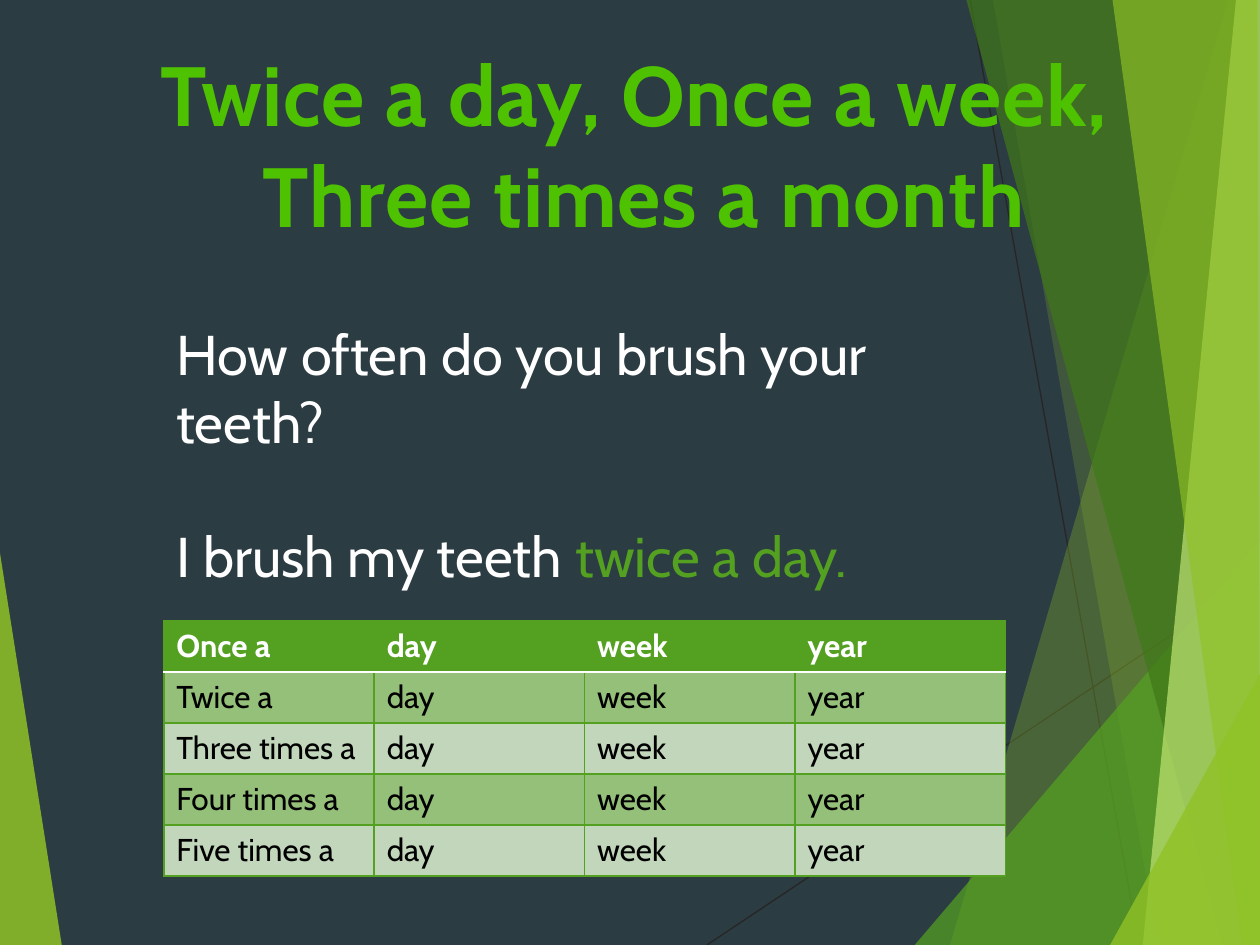
from lxml import etree
from pptx import Presentation
from pptx import util as u
from pptx.dml.color import RGBColor
from pptx.enum import shapes, text
from pptx.oxml import ns

WIDTH, HEIGHT = 10, 7.5
FONT = "Cabin"
COLOURS = {
    "back": "2C3C43", "line": "262626", "lime": "90C226", "green": "54A021",
    "forest": "3F7819", "pale": "C0E474", "title": "4EC100", "white": "FFFFFF",
    "black": "000000", "band dark": "95C07A", "band light": "C1D6BA",
}
RAYS = [((5.61, HEIGHT), (WIDTH, 4.57)), ((7.7, 0), (9.04, HEIGHT))]
FACETS = [
    ("lime", 85, [(0, 4.39), (0.49, HEIGHT), (0, HEIGHT)]),
    ("lime", 30, [(9.75, 0), (7.54, HEIGHT), (WIDTH, HEIGHT), (WIDTH, 0)]),
    ("lime", 20, [(7.88, 0), (9.19, HEIGHT), (WIDTH, HEIGHT), (WIDTH, 0)]),
    ("green", 72, [(7.26, HEIGHT), (WIDTH, 4.29), (WIDTH, HEIGHT)]),
    ("forest", 70, [(7.67, 0), (9.7, HEIGHT), (WIDTH, HEIGHT), (WIDTH, 0)]),
    ("pale", 70, [(9.81, 0), (9.07, HEIGHT), (WIDTH, HEIGHT), (WIDTH, 0)]),
    ("lime", 65, [(8.83, 0), (9.86, HEIGHT), (WIDTH, HEIGHT), (9.98, 0)]),
    ("lime", 80, [(8.81, HEIGHT), (WIDTH, 5.35), (WIDTH, HEIGHT)]),
]
TITLE = [[("Twice a day, Once a week, ", "title")], [("Three times a month", "title")]]
DIALOGUE = [
    [("How often do you brush your teeth?", "white")],
    [("I brush my teeth ", "white"), ("twice a day.", "green")],
]
COUNTS = ["Once a", "Twice a", "Three times a", "Four times a", "Five times a"]
PERIODS = ["day", "week", "year"]
TITLE_FORMAT = {"name": FONT, "size": u.Pt(48), "bold": True}
BODY_FORMAT = {"name": FONT, "size": u.Pt(32), "bold": False}
TABLE_LEFT, TABLE_TOP, COLUMN, ROW = 1.3, 4.93, 1.67, 0.405


def rgb(name):
    return RGBColor.from_string(COLOURS[name])


def add_span(para, wording, colour, values):
    span = para.add_run()
    span.text = wording
    for key, value in values.items():
        setattr(span.font, key, value)
    span.font.color.rgb = rgb(colour)
    return span


def add_text(page, area, paragraphs, values, align, gap=0, spacing=0):
    frame = page.shapes.add_textbox(*map(u.Inches, area)).text_frame
    frame.word_wrap = True
    frame.auto_size = text.MSO_AUTO_SIZE.SHAPE_TO_FIT_TEXT
    for index, spans in enumerate(paragraphs):
        para = frame.add_paragraph() if index else frame.paragraphs[0]
        para.alignment = align
        para.space_before = u.Pt(gap if index else 0)
        for wording, colour in spans:
            span = add_span(para, wording, colour, values)
            span.font._element.set("spc", str(spacing))


def add_ray(page, start, end):
    ray = page.shapes.add_connector(
        shapes.MSO_CONNECTOR.STRAIGHT, *map(u.Inches, start + end))
    ray.line.color.rgb = rgb("line")
    ray.line.width = u.Pt(0.75)
    etree.SubElement(ray._element.spPr, ns.qn("a:effectLst"))


def add_facet(page, colour, opacity, points):
    grid = [(x * 100, y * 100) for x, y in points]
    builder = page.shapes.build_freeform(*grid[0], scale=u.Inches(0.01))
    builder.add_line_segments(grid[1:], close=True)
    facet = builder.convert_to_shape()
    facet.shadow.inherit = False
    facet.line.fill.background()
    facet.fill.solid()
    facet.fill.fore_color.rgb = rgb(colour)
    tint = facet._element.spPr.find(".//" + ns.qn("a:srgbClr"))
    etree.SubElement(tint, ns.qn("a:alpha"), val=str(opacity * 1000))


def set_borders(cell, borders):
    properties = cell._tc.get_or_add_tcPr()
    for side, (colour, width) in borders.items():
        edge = etree.SubElement(properties, ns.qn("a:ln" + side), w=str(u.Pt(width)))
        fill = etree.SubElement(edge, ns.qn("a:solidFill"))
        etree.SubElement(fill, ns.qn("a:srgbClr"), val=COLOURS[colour])


def add_frequency_table(page):
    columns = len(PERIODS) + 1
    area = (TABLE_LEFT, TABLE_TOP, COLUMN * columns, ROW * len(COUNTS))
    table = page.shapes.add_table(len(COUNTS), columns, *map(u.Inches, area)).table
    for row, count in enumerate(COUNTS):
        table.rows[row].height = u.Inches(ROW)
        band = "green" if row == 0 else "band dark" if row % 2 else "band light"
        borders = dict.fromkeys("LRTB", ("green", 1))
        if row < 2:
            borders["B" if row == 0 else "T"] = ("white", 1.5)
        values = {"name": FONT, "size": u.Pt(18), "bold": row == 0}
        for column, wording in enumerate([count] + PERIODS):
            cell = table.cell(row, column)
            set_borders(cell, borders)
            cell.fill.solid()
            cell.fill.fore_color.rgb = rgb(band)
            add_span(cell.text_frame.paragraphs[0], wording,
                     "black" if row else "white", values)


def main():
    deck = Presentation()
    deck.slide_width, deck.slide_height = u.Inches(WIDTH), u.Inches(HEIGHT)
    page = deck.slides.add_slide(deck.slide_layouts[6])
    page.background.fill.solid()
    page.background.fill.fore_color.rgb = rgb("back")
    for start, end in RAYS:
        add_ray(page, start, end)
    for facet in FACETS:
        add_facet(page, *facet)
    add_text(page, (0.51, 0.29, 9.21, 1.72), TITLE, TITLE_FORMAT,
             text.PP_ALIGN.CENTER, spacing=50)
    add_text(page, (TABLE_LEFT, 2.49, 6.22, 2.26), DIALOGUE, BODY_FORMAT,
             text.PP_ALIGN.LEFT, gap=38.5)
    add_frequency_table(page)
    deck.save("out.pptx")


if __name__ == "__main__":
    main()
